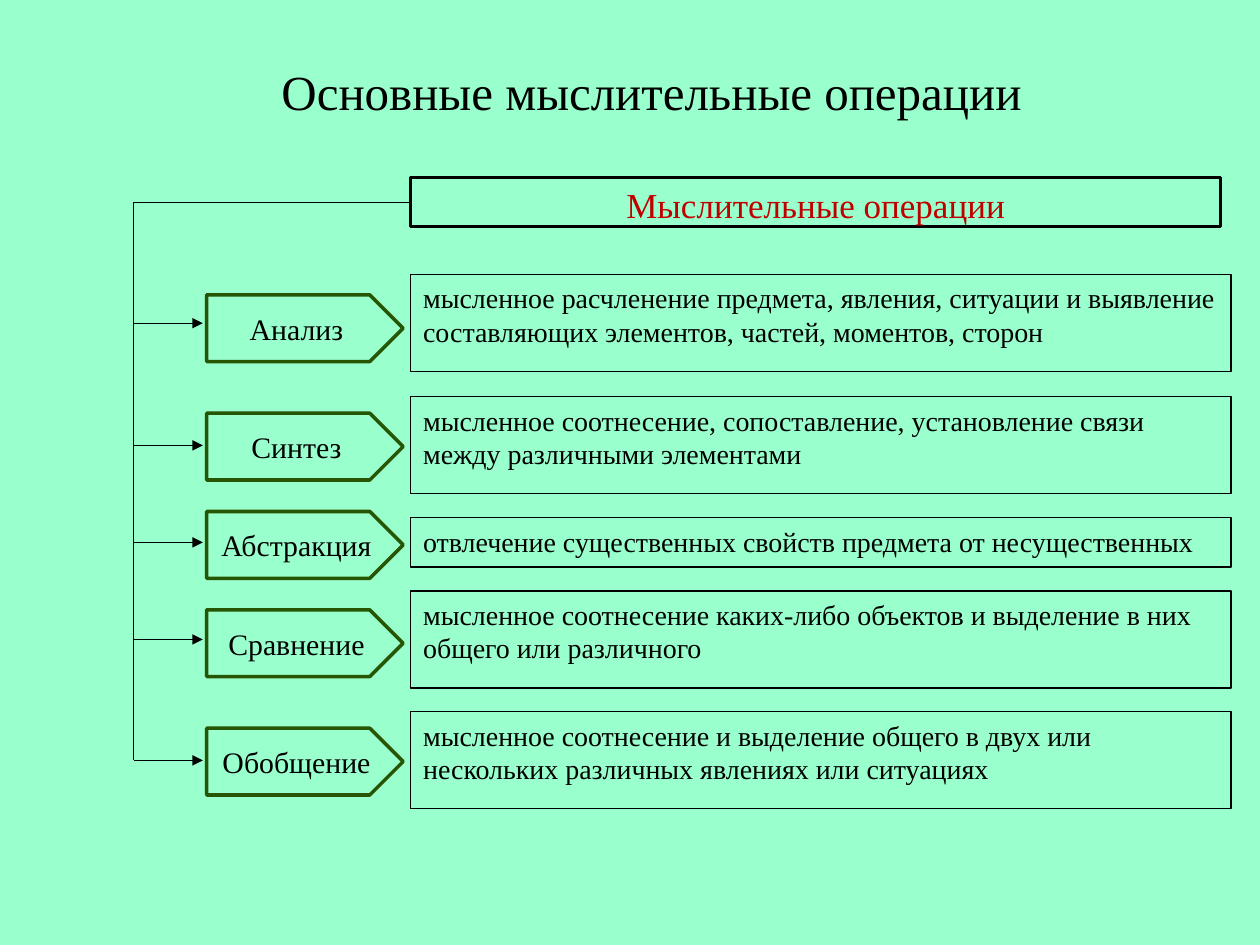
from dataclasses import dataclass

from lxml.etree import SubElement
from pptx import Presentation
from pptx.dml.color import RGBColor
from pptx.enum.shapes import MSO_CONNECTOR, MSO_SHAPE
from pptx.enum.text import MSO_ANCHOR, PP_ALIGN
from pptx.oxml.ns import qn
from pptx.util import Inches, Pt


@dataclass(frozen=True)
class Theme:
    font: str = "Times New Roman"
    background: str = "99FFCC"
    ink: str = "000000"
    accent: str = "C00000"
    label_border: str = "265504"
    title_size: int = 28
    heading_size: int = 20
    label_size: int = 17
    body_size: int = 16
    thin: float = 0.75
    medium: float = 1.5
    thick: float = 2


def write_text(frame, text, *, font, size, color,
               align=PP_ALIGN.LEFT, anchor=MSO_ANCHOR.TOP, side_inset=0.1):
    frame.word_wrap = True
    frame.vertical_anchor = anchor
    frame.margin_left = frame.margin_right = Inches(side_inset)
    paragraph = frame.paragraphs[0]
    paragraph.text = text
    paragraph.alignment = align
    paragraph.font.name = font
    paragraph.font.size = Pt(size)
    paragraph.font.color.rgb = RGBColor.from_string(color)


class SlideBuilder:
    def __init__(self, slide, theme):
        self.slide = slide
        self.theme = theme
        fill = slide.background.fill
        fill.solid()
        fill.fore_color.rgb = RGBColor.from_string(theme.background)

    def title(self, text, left, top, width, height):
        heading = self.slide.shapes.add_textbox(
            Inches(left), Inches(top), Inches(width), Inches(height))
        write_text(heading.text_frame, text, font=self.theme.font,
                   size=self.theme.title_size, color=self.theme.ink,
                   align=PP_ALIGN.CENTER)

    def outlined(self, preset, text, left, top, width, height, *,
                 size, border, weight, color=None, **text_format):
        outline = self.slide.shapes.add_shape(
            preset, Inches(left), Inches(top), Inches(width), Inches(height))
        outline.shadow.inherit = False
        outline.fill.background()
        outline.line.color.rgb = RGBColor.from_string(border)
        outline.line.width = Pt(weight)
        write_text(outline.text_frame, text, font=self.theme.font, size=size,
                   color=color or self.theme.ink, **text_format)
        return outline

    def box(self, text, left, top, width, height, **style):
        return self.outlined(MSO_SHAPE.RECTANGLE, text, left, top, width,
                             height, border=self.theme.ink, **style)

    def label(self, text, left, top, width, height):
        return self.outlined(
            MSO_SHAPE.PENTAGON, text, left, top, width, height,
            size=self.theme.label_size, border=self.theme.label_border,
            weight=self.theme.thick, align=PP_ALIGN.CENTER,
            anchor=MSO_ANCHOR.MIDDLE, side_inset=0.05)

    def line(self, x1, y1, x2, y2, arrow=False):
        connector = self.slide.shapes.add_connector(
            MSO_CONNECTOR.STRAIGHT, Inches(x1), Inches(y1),
            Inches(x2), Inches(y2))
        connector.line.color.rgb = RGBColor.from_string(self.theme.ink)
        connector.line.width = Pt(self.theme.thin)
        if arrow:
            SubElement(connector.line._get_or_add_ln(), qn("a:tailEnd"),
                       type="triangle")
        SubElement(connector._element.spPr, qn("a:effectLst"))
        return connector


# Operation, label top, definition top, definition height, definition
OPERATIONS = [
    ("Анализ", 2.34, 2.18, 0.77,
     "мысленное расчленение предмета, явления, ситуации и выявление "
     "составляющих элементов, частей, моментов, сторон"),
    ("Синтез", 3.28, 3.15, 0.77,
     "мысленное соотнесение, сопоставление, установление связи "
     "между различными элементами"),
    ("Абстракция", 4.06, 4.11, 0.39,
     "отвлечение существенных свойств предмета от несущественных"),
    ("Сравнение", 4.84, 4.69, 0.77,
     "мысленное соотнесение каких-либо объектов и выделение в них "
     "общего или различного"),
    ("Обобщение", 5.78, 5.65, 0.77,
     "мысленное соотнесение и выделение общего в двух или "
     "нескольких различных явлениях или ситуациях"),
]
TRUNK_X, ARROW_END, LABEL_X, BOX_X = 1.06, 1.61, 1.64, 3.26
HEADER_TOP, HEADER_HEIGHT = 1.41, 0.39


def main():
    presentation = Presentation()
    presentation.slide_width, presentation.slide_height = Inches(10), Inches(7.5)
    theme = Theme()
    builder = SlideBuilder(
        presentation.slides.add_slide(presentation.slide_layouts[6]), theme)

    # Title and header
    builder.title("Основные мыслительные операции", TRUNK_X, 0.44, 8.22, 0.58)
    header = builder.box("Мыслительные операции", BOX_X, HEADER_TOP, 6.43,
                         HEADER_HEIGHT, size=theme.heading_size,
                         weight=theme.medium, color=theme.accent,
                         align=PP_ALIGN.CENTER)

    # Operations: arrow, label and definition
    for name, label_top, top, height, definition in OPERATIONS:
        middle = top + height / 2
        builder.line(TRUNK_X, middle, ARROW_END, middle, arrow=True)
        builder.label(name, LABEL_X, label_top, 1.56, 0.53)
        builder.box(definition, BOX_X, top, 6.51, height,
                    size=theme.body_size, weight=theme.thin)

    # Trunk from the header down to the last arrow
    header_middle = HEADER_TOP + HEADER_HEIGHT / 2
    builder.line(TRUNK_X, header_middle, TRUNK_X, middle)
    branch = builder.line(TRUNK_X, header_middle, BOX_X, header_middle)
    branch.end_connect(header, 1)

    presentation.save("out.pptx")


if __name__ == "__main__":
    main()
